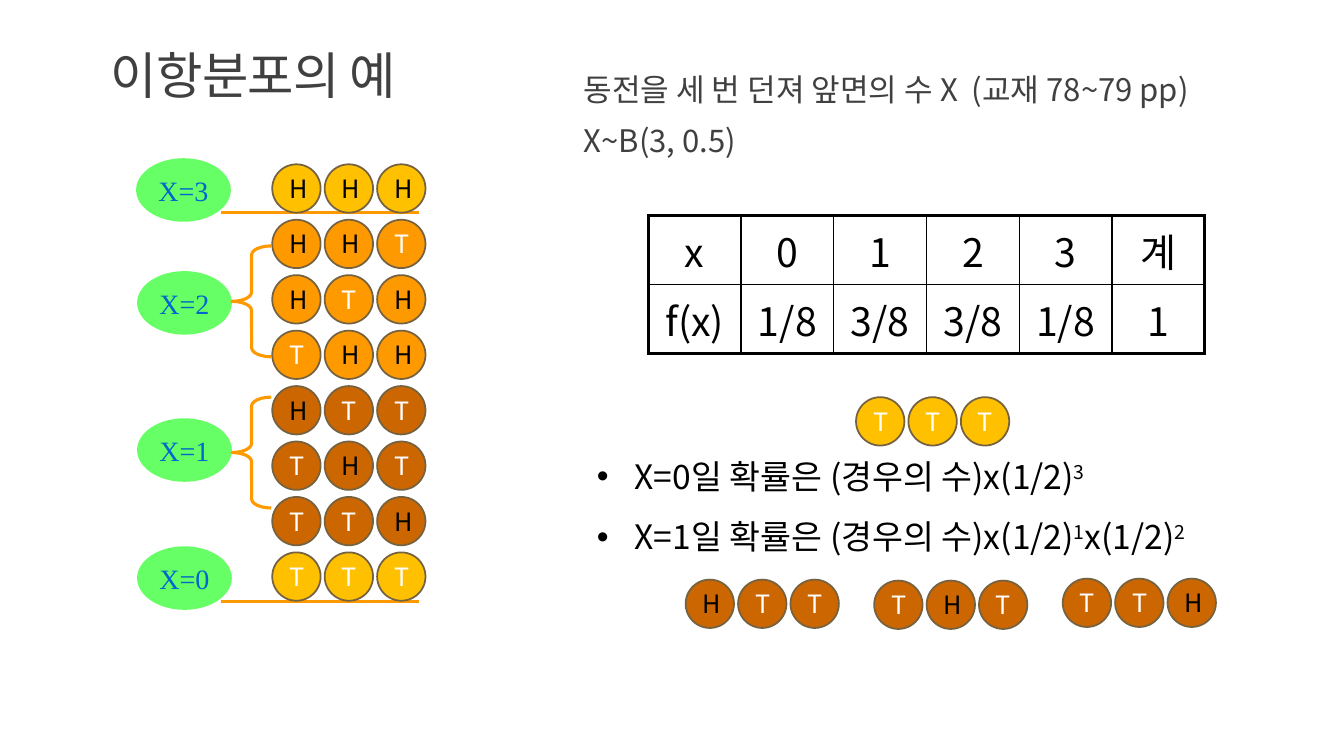
"""Builds a slide on the binomial distribution of three coin tosses."""
from typing import NamedTuple

from lxml.etree import SubElement
from pptx import Presentation
from pptx.dml.color import RGBColor
from pptx.enum.shapes import MSO_CONNECTOR, MSO_SHAPE
from pptx.enum.text import MSO_ANCHOR as Anchor, MSO_AUTO_SIZE as AutoSize, PP_ALIGN as Align
from pptx.oxml.ns import qn
from pptx.util import Inches, Pt

SANS, SERIF = "Noto Sans CJK KR", "Times New Roman"
BLACK, WHITE, GRAY = "000000", "FFFFFF", "404040"
GOLD, ORANGE, BROWN = "FFC000", "FF9900", "CC6600"
COIN_SIZE, COIN_PITCH = 0.48, 0.52
OUTCOME_LEFT, OUTCOME_TOP, OUTCOME_PITCH = 2.7, 1.63, 0.55


class CoinRow(NamedTuple):
    faces: str
    color: str
    left: float
    top: float


class CountLabel(NamedTuple):
    text: str
    left: float
    top: float


OUTCOMES = [("HHH", GOLD), ("HHT", ORANGE), ("HTH", ORANGE), ("THH", ORANGE),
            ("HTT", BROWN), ("THT", BROWN), ("TTH", BROWN), ("TTT", GOLD)]
OUTCOME_ROWS = [CoinRow(faces, color, OUTCOME_LEFT, OUTCOME_TOP + index * OUTCOME_PITCH)
                for index, (faces, color) in enumerate(OUTCOMES)]
NO_HEAD_ROWS = [CoinRow("TTT", GOLD, 8.49, 3.94)]
ONE_HEAD_ROWS = [CoinRow("HTT", BROWN, 6.8, 5.75), CoinRow("THT", BROWN, 8.67, 5.76),
                 CoinRow("TTH", BROWN, 10.54, 5.74)]
COUNT_LABELS = [CountLabel("X=3", 1.35, 1.57), CountLabel("X=2", 1.36, 2.69),
                CountLabel("X=1", 1.36, 4.15), CountLabel("X=0", 1.36, 5.42)]
DISTRIBUTION = [["x", "0", "1", "2", "3", "계"],
                ["f(x)", "1/8", "3/8", "3/8", "1/8", "1"]]
PROBABILITIES = [[("X=0일 확률은 (경우의 수)x(1/2)", "3")],
                 [("X=1일 확률은 (경우의 수)x(1/2)", "1"), ("x(1/2)", "2")]]


def rgb(color: str) -> RGBColor:
    return RGBColor.from_string(color)


def style(paragraph, size: float, color: str, font_name: str = SANS, align=Align.LEFT):
    paragraph.alignment = align
    font = paragraph.font
    font.size, font.name = Pt(size), font_name
    font.color.rgb = rgb(color)
    properties = paragraph._p.pPr.find(qn("a:defRPr"))
    SubElement(properties, qn("a:ea")).set("typeface", font_name)
    return properties


def place(shape, left: float, top: float, width: float, height: float) -> None:
    shape.left, shape.top = Inches(left), Inches(top)
    shape.width, shape.height = Inches(width), Inches(height)


def add_preset(shapes, kind, left: float, top: float, width: float, height: float):
    shape = shapes.add_shape(kind, Inches(left), Inches(top), Inches(width), Inches(height))
    shape.shadow.inherit = False
    return shape


def add_title(title) -> None:
    place(title, 1, 0.3, 4.45, 0.79)
    frame = title.text_frame
    frame.text = "이항분포의 예"
    frame.vertical_anchor, frame.auto_size = Anchor.BOTTOM, AutoSize.NONE
    paragraph = frame.paragraphs[0]
    paragraph.line_spacing = 0.85
    style(paragraph, 36, GRAY).set("spc", "-50")


def add_experiment(body) -> None:
    place(body, 5.69, 0.52, 7.12, 1.58)
    frame = body.text_frame
    frame.text = "동전을 세 번 던져 앞면의 수 X  (교재 78~79 pp)\nX~B(3, 0.5)"
    frame.auto_size = AutoSize.NONE
    frame.margin_left = frame.margin_right = 0
    for paragraph, line_spacing in zip(frame.paragraphs, (1.35, 1)):
        properties = paragraph._p.get_or_add_pPr()
        properties.set("marL", str(Inches(0.1)))
        properties.set("indent", "0")
        SubElement(properties, qn("a:buNone"))
        paragraph.line_spacing = line_spacing
        paragraph.space_before, paragraph.space_after = Pt(8), Pt(1.5)
        style(paragraph, 22.2, GRAY)


def add_probabilities(body) -> None:
    place(body, 5.82, 4.47, 7.5, 1.74)
    frame = body.text_frame
    frame.auto_size = AutoSize.NONE
    for index, terms in enumerate(PROBABILITIES):
        paragraph = frame.add_paragraph() if index else frame.paragraphs[0]
        paragraph.space_before = Pt(14.5 * index)
        style(paragraph, 24, BLACK)
        for base, exponent in terms:
            paragraph.add_run().text = base
            power = paragraph.add_run()
            power.text = exponent
            power._r.get_or_add_rPr().set("baseline", "30000")


def add_label(shapes, label: CountLabel) -> None:
    oval = add_preset(shapes, MSO_SHAPE.OVAL, label.left, label.top, 0.94, 0.63)
    oval.fill.solid()
    oval.fill.fore_color.rgb = rgb("66FF66")
    oval.line.fill.background()
    frame = oval.text_frame
    frame.text, frame.word_wrap, frame.vertical_anchor = label.text, False, Anchor.MIDDLE
    style(frame.paragraphs[0], 20, "0066CC", SERIF, Align.CENTER)


def set_orange_line(shape) -> None:
    shape.line.color.rgb = rgb(ORANGE)
    shape.line.width = Pt(2.25)


def add_underline(shapes, top: float) -> None:
    line = shapes.add_connector(MSO_CONNECTOR.STRAIGHT, Inches(2.19), Inches(top),
                                Inches(4.16), Inches(top))
    set_orange_line(line)
    SubElement(line._element.spPr, qn("a:effectLst"))


def add_brace(shapes, top: float) -> None:
    brace = add_preset(shapes, MSO_SHAPE.LEFT_BRACE, 2.3, top, 0.39, 1.1)
    brace.adjustments[0] = 0.23
    brace.fill.background()
    set_orange_line(brace)


def add_coins(slide, rows: list[CoinRow]) -> None:
    shapes = slide.shapes.add_group_shape().shapes
    for row in rows:
        for index, face in enumerate(row.faces):
            coin = add_preset(shapes, MSO_SHAPE.OVAL, row.left + index * COIN_PITCH, row.top,
                              COIN_SIZE, COIN_SIZE)
            coin.fill.solid()
            coin.fill.fore_color.rgb = rgb(row.color)
            coin.line.color.rgb = rgb("746241")
            coin.line.width = Pt(1.25)
            frame = coin.text_frame
            frame.text, frame.vertical_anchor = face, Anchor.MIDDLE
            style(frame.paragraphs[0], 18, BLACK if face == "H" else WHITE, align=Align.CENTER)


def add_border(cell, side: str, width: float) -> None:
    border = SubElement(cell._tc.get_or_add_tcPr(), qn(f"a:ln{side}"), w=str(Pt(width)))
    fill = SubElement(border, qn("a:solidFill"))
    SubElement(fill, qn("a:srgbClr"), val=BLACK)


def add_distribution(slide) -> None:
    row_count, column_count = len(DISTRIBUTION), len(DISTRIBUTION[0])
    table = slide.shapes.add_table(row_count, column_count, Inches(6.43), Inches(2.14),
                                   Inches(0.92 * column_count), Inches(1.37)).table
    table.first_row = table.horz_banding = False
    for row, texts in enumerate(DISTRIBUTION):
        for column, text in enumerate(texts):
            cell = table.cell(row, column)
            outer_sides = {"L": column == 0, "R": column == column_count - 1,
                           "T": row == 0, "B": row == row_count - 1}
            for side, is_outer in outer_sides.items():
                add_border(cell, side, 2.25 if is_outer else 1)
            cell.fill.background()
            cell.text, cell.vertical_anchor = text, Anchor.MIDDLE
            style(cell.text_frame.paragraphs[0], 28, BLACK, align=Align.CENTER)


def main() -> None:
    presentation = Presentation()
    presentation.slide_width, presentation.slide_height = Inches(13.33), Inches(7.5)
    slide = presentation.slides.add_slide(presentation.slide_layouts[3])
    title, experiment, probabilities = slide.placeholders
    add_title(title)
    add_experiment(experiment)
    add_probabilities(probabilities)
    for label in COUNT_LABELS:
        add_label(slide.shapes, label)
    for top in (2.11, 5.97):
        add_underline(slide.shapes, top)
    for top in (2.44, 3.94):
        add_brace(slide.shapes, top)
    add_distribution(slide)
    for rows in (OUTCOME_ROWS, NO_HEAD_ROWS, ONE_HEAD_ROWS):
        add_coins(slide, rows)
    presentation.save("out.pptx")


if __name__ == "__main__":
    main()
